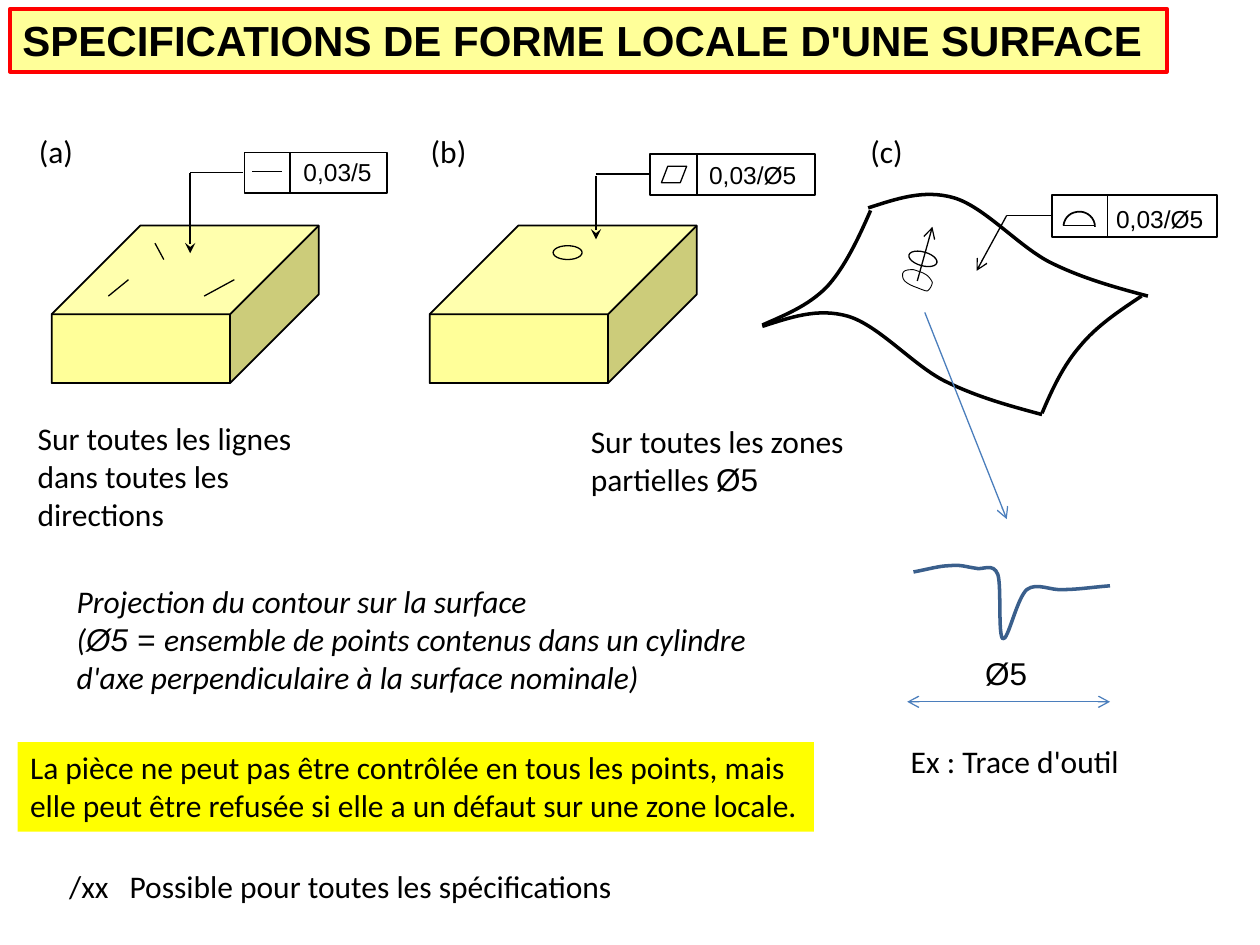
import lxml.etree
import pptx
import pptx.dml.color
import pptx.enum.shapes
import pptx.enum.text
import pptx.oxml.ns
import pptx.util

COLS, ROWS = 100, 75
CELL = pptx.util.Inches(10) // COLS
COLORS = {
    "ink": "000000",
    "cream": "FFFF99",
    "highlight": "FFFF00",
    "red": "FF0000",
    "blue": "4B7EBC",
    "navy": "3A5F8C",
}
SHAPE = pptx.enum.shapes.MSO_SHAPE
ALIGN = pptx.enum.text.PP_ALIGN
qn = pptx.oxml.ns.qn


def grid(*values):
    return [round(v * CELL) for v in values]


def rgb(name):
    return pptx.dml.color.RGBColor.from_string(COLORS[name])


def set_line(sp, color, width):
    sp.line.color.rgb = rgb(color)
    sp.line.width = pptx.util.Pt(width)


def add_box(s, kind, x, y, w, h, fill=None, line="ink", width=1):
    sp = s.shapes.add_shape(kind, *grid(x, y, w, h))
    sp.shadow.inherit = False
    if fill:
        sp.fill.solid()
        sp.fill.fore_color.rgb = rgb(fill)
    else:
        sp.fill.background()
    if line:
        set_line(sp, line, width)
    else:
        sp.line.fill.background()
    return sp


def add_line(s, x1, y1, x2, y2, color="ink", width=0.75, head=None, tail=None):
    sp = s.shapes.add_connector(
        pptx.enum.shapes.MSO_CONNECTOR.STRAIGHT, *grid(x1, y1, x2, y2))
    set_line(sp, color, width)
    lxml.etree.SubElement(sp._element.spPr, qn("a:effectLst"))
    ln = sp.line._get_or_add_ln()
    for tag, kind in (("a:headEnd", head), ("a:tailEnd", tail)):
        if kind:
            lxml.etree.SubElement(ln, qn(tag)).set("type", kind)


def add_curve(s, points, color="ink", width=2, close=False):
    """Draw cubic Béziers: a start point, then three points for each segment."""
    start, *rest = [grid(*point) for point in points]
    builder = s.shapes.build_freeform(*start)
    builder.add_line_segments(rest, close=close)
    sp = builder.convert_to_shape()
    sp.shadow.inherit = False
    sp.fill.background()
    set_line(sp, color, width)
    path = sp._element.xpath(".//a:path")[0]
    steps = path.findall(qn("a:lnTo"))
    for i in range(0, len(steps), 3):
        bezier = lxml.etree.Element(qn("a:cubicBezTo"))
        steps[i].addprevious(bezier)
        for step in steps[i:i + 3]:
            bezier.append(step[0])
            path.remove(step)


def write(sp, paragraphs, size=18, wrap=True, align=ALIGN.LEFT, bold=None, italic=None):
    """Fill a shape with paragraphs, each a list of (text, font) runs."""
    tf = sp.text_frame
    tf.word_wrap = wrap
    tf.auto_size = pptx.enum.text.MSO_AUTO_SIZE.SHAPE_TO_FIT_TEXT
    tf.vertical_anchor = pptx.enum.text.MSO_ANCHOR.TOP
    for i, runs in enumerate(paragraphs):
        p = tf.add_paragraph() if i else tf.paragraphs[0]
        p.alignment = align
        for text, font in runs:
            r = p.add_run()
            r.text = text
            r.font.name = font
            r.font.size = pptx.util.Pt(size)
            r.font.bold, r.font.italic = bold, italic
            r.font.color.rgb = rgb("ink")


def add_text(s, x, y, w, h, paragraphs, **style):
    sp = s.shapes.add_textbox(*grid(x, y, w, h))
    write(sp, paragraphs, **style)
    return sp


def add_label(s, x, y, w, text, font="Calibri", **style):
    return add_text(s, x, y, w, 4, [[(text, font)]], wrap=False, **style)


def add_block(s, x, y):
    add_box(s, SHAPE.CUBE, x, y, 21.2, 12.5, "cream").adjustments[0] = 0.563


def add_tolerance_frame(s, x, y, w, h, split):
    """Draw a two-cell frame whose symbol cell is split wide."""
    add_box(s, SHAPE.RECTANGLE, x, y, w, h)
    add_line(s, x + split, y, x + split, y + h, width=1)


def draw_straightness(s):
    add_label(s, 2.1, 10, 4.8, "(a)")
    add_block(s, 4.1, 17.9)
    add_tolerance_frame(s, 19.4, 12.1, 11.3, 3.2, 3.6)
    add_label(s, 23.1, 12, 7.5, "0,03/5", "Arial", size=14)
    add_line(s, 20, 13.6, 22.4, 13.6)
    add_line(s, 15.1, 13.7, 19.3, 13.7, width=1)
    add_line(s, 15.1, 13.7, 15.1, 20.1, width=1, tail="stealth")
    for mark in ((12.3, 19.3, 13, 20.6), (16.2, 23.5, 18.6, 22.2), (8.6, 23.5, 10.2, 22.2)):
        add_line(s, *mark)


def draw_flatness(s):
    add_label(s, 33.2, 10, 4.9, "(b)")
    add_block(s, 34.1, 17.9)
    add_tolerance_frame(s, 51.6, 12.2, 13.1, 3.3, 3.7)
    add_label(s, 55.3, 12.2, 9, "0,03/Ø5", "Arial", size=14)
    add_box(s, SHAPE.PARALLELOGRAM, 52.5, 13.2, 2, 1.3, width=0.75).adjustments[0] = 0.385
    add_line(s, 47.3, 13.8, 51.5, 13.8, width=1)
    add_line(s, 47.3, 14, 47.3, 19, width=1, tail="stealth")
    add_box(s, SHAPE.OVAL, 43.9, 19.5, 2.3, 1.1, width=0.75)


def draw_surface_profile(s):
    add_label(s, 68.1, 10, 4.6, "(c)")
    add_tolerance_frame(s, 83.5, 15.5, 13.1, 3.3, 4.4)
    add_label(s, 87.6, 15.7, 9, "0,03/Ø5", "Arial", size=14)
    add_curve(s, [(84.4, 17.9), (84.5, 17.2), (85, 16.8), (85.7, 16.8),
                  (86.3, 16.8), (86.9, 17.3), (86.9, 18)], width=1)
    add_line(s, 84.4, 17.9, 86.8, 17.9, width=1)

    long_edge = [(60.5, 25.9), (62.7, 25.2), (64.9, 24.4), (67.3, 25.1), (69.7, 25.8),
                 (72.4, 28.9), (74.9, 30.2), (77.5, 31.5), (80.1, 32.2), (82.7, 32.9)]
    add_curve(s, long_edge)
    add_curve(s, [(x + 8.4, y - 9.4) for x, y in long_edge])
    add_curve(s, [(60.5, 25.8), (62.3, 25), (64.1, 24.3), (65.6, 22.8),
                  (67, 21.3), (68.1, 19), (69.1, 16.7)])
    add_curve(s, [(82.7, 32.8), (83.5, 30.9), (84.4, 29), (85.7, 27.5),
                  (87, 25.9), (88.8, 24.7), (90.6, 23.5)])

    add_line(s, 79.9, 17.1, 83.4, 17.1)
    add_line(s, 79.9, 17.1, 77.5, 21.5, tail="arrow")
    add_box(s, SHAPE.OVAL, 72.1, 20, 2.3, 1.1, width=0.75).rotation = 15.7
    add_line(s, 72.8, 22.3, 74, 18, tail="arrow")
    add_curve(s, [(71.7, 21.6), (71.6, 21.7), (71.6, 22.1), (71.8, 22.3), (72, 22.5),
                  (72.4, 22.7), (72.7, 22.8), (73, 22.9), (73.4, 23.1), (73.6, 23.1),
                  (73.8, 23), (74, 22.6), (74, 22.4), (73.9, 22.2), (73.7, 21.9),
                  (73.5, 21.8), (73.2, 21.6), (72.8, 21.5), (72.5, 21.4), (72.3, 21.4),
                  (71.8, 21.4), (71.7, 21.6)], width=0.5, close=True)


def draw_tool_mark(s):
    add_curve(s, [(72.5, 45.4), (73.6, 45.2), (74.6, 44.9), (75.4, 44.9), (76.2, 44.8),
                  (76.7, 45), (77.4, 45.1), (78, 45.3), (78.8, 44.6), (79.2, 45.6),
                  (79.5, 46.5), (79.2, 50.5), (79.6, 50.7), (80, 50.9), (80.7, 47.5),
                  (81.5, 46.8), (82.3, 46.2), (83.4, 46.9), (84.4, 46.8), (85.5, 46.8),
                  (86.8, 46.6), (88.1, 46.5)], "navy")
    add_line(s, 73.4, 24.8, 79.9, 41.2, "blue", tail="arrow")
    add_line(s, 72, 55.7, 88.1, 55.7, "blue", head="arrow", tail="arrow")
    add_label(s, 77.2, 51.4, 5.4, "Ø5", "Arial")
    add_label(s, 71.3, 58.4, 18.7, "Ex : Trace d'outil")


def write_comments(s):
    add_text(s, 2, 32.8, 24.8, 10.1,
             [[("Sur toutes les lignes dans toutes les directions", "Calibri")]])
    add_text(s, 45.9, 33, 24.8, 7.1,
             [[("Sur toutes les zones partielles ", "Calibri"), ("Ø5", "Arial")]])
    add_text(s, 5.1, 45.7, 57.4, 10.1, [
        [("Projection du contour sur la surface", "Calibri")],
        [("(", "Calibri"), ("Ø5 = ", "Arial"),
         ("ensemble de points contenus dans un cylindre d'axe perpendiculaire "
          "à la surface nominale)", "Calibri")],
    ], italic=True)
    sp = add_box(s, SHAPE.RECTANGLE, 1.4, 58.9, 63.2, 7.1, "highlight", line=None)
    write(sp, [[("La pièce ne peut pas être contrôlée en tous les points, mais elle peut "
                 "être refusée si elle a un défaut sur une zone locale.", "Calibri")]])
    sp = add_text(s, 4.5, 68.3, 46.2, 4,
                  [[("/xx\tPossible pour toutes les spécifications", "Calibri")]])
    tabs = lxml.etree.SubElement(sp.text_frame.paragraphs[0]._p.get_or_add_pPr(), qn("a:tabLst"))
    lxml.etree.SubElement(tabs, qn("a:tab"), pos=str(grid(4.8)[0]), algn="l")


def main():
    prs = pptx.Presentation()
    prs.slide_width, prs.slide_height = COLS * CELL, ROWS * CELL
    s = prs.slides.add_slide(prs.slide_layouts[6])
    title = add_box(s, SHAPE.RECTANGLE, 0.8, 0.7, 91.8, 5, "cream", "red", 2.25)
    write(title, [[("SPECIFICATIONS DE FORME LOCALE D'UNE SURFACE", "Arial")]],
          size=24, wrap=False, bold=True)
    draw_straightness(s)
    draw_flatness(s)
    draw_surface_profile(s)
    draw_tool_mark(s)
    write_comments(s)
    prs.save("out.pptx")


if __name__ == "__main__":
    main()
